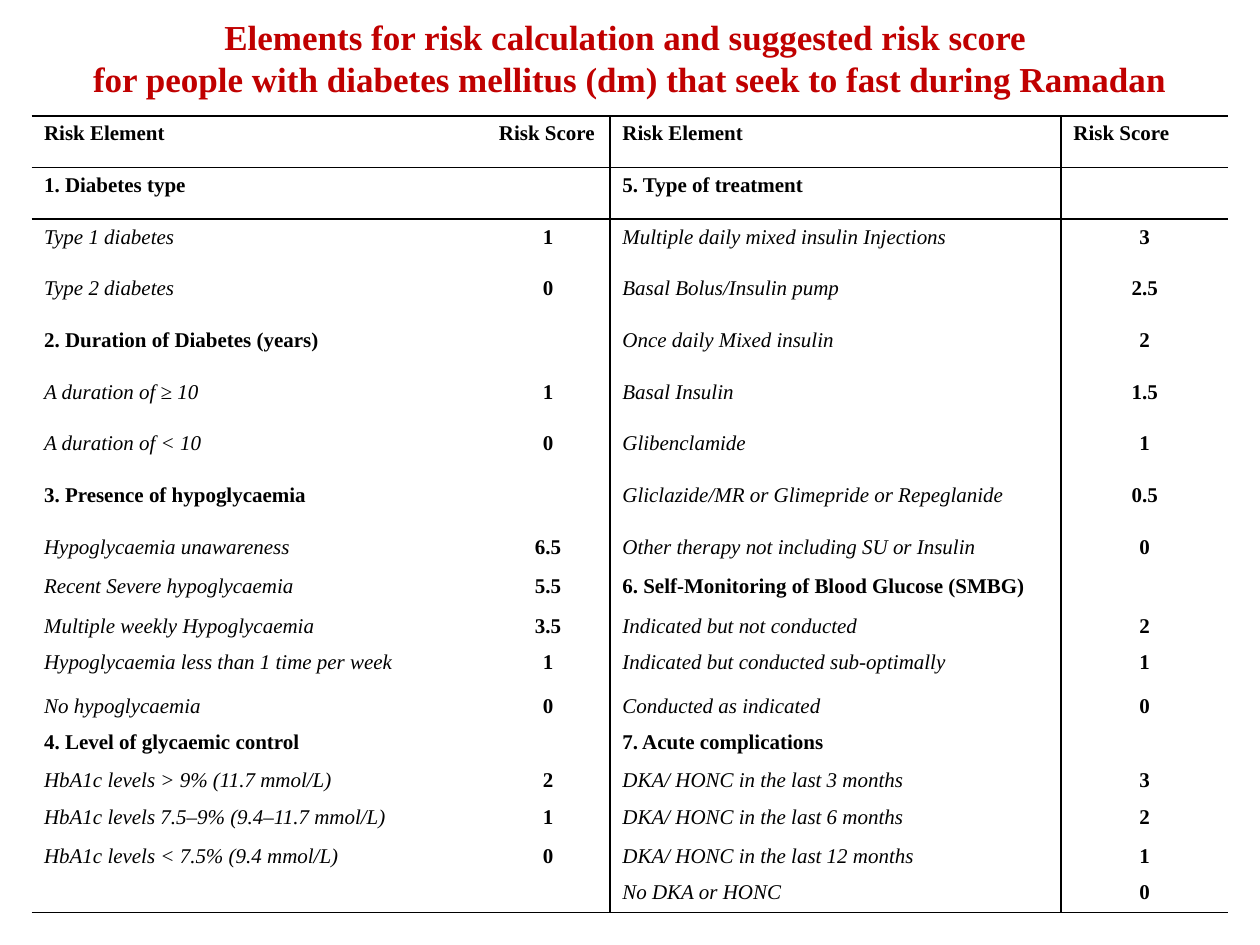
from lxml import etree
from pptx import Presentation
from pptx.dml.color import RGBColor
from pptx.enum.text import MSO_ANCHOR, PP_ALIGN
from pptx.oxml.ns import qn
from pptx.util import Inches, Pt

FONT = "Times New Roman"
BLACK, RED = "000000", "C00000"
PLAIN_TABLE = "{2D5ABB26-0587-4C30-8999-92F81FD0307C}"

TITLE = [
    "Elements for risk calculation and suggested risk score ",
    "for people with diabetes mellitus (dm) that seek to fast during Ramadan",
]
COLUMN_WIDTHS = [3.61, 0.98, 3.58, 1.33]
ROW_HEIGHTS = [0.41] * 8 + [0.31, 0.32, 0.28, 0.35, 0.28, 0.28, 0.29, 0.31, 0.28, 0.28]
HEADER = ("Risk Element", "Risk Score")

# Each half of the table: (element, score); headings have no score
LEFT_RISKS = [
    HEADER,
    ("1. Diabetes type", ""),
    ("Type 1 diabetes", "1"),
    ("Type 2 diabetes", "0"),
    ("2. Duration of Diabetes (years)", ""),
    ("A duration of ≥ 10", "1"),
    ("A duration of < 10", "0"),
    ("3. Presence of hypoglycaemia", ""),
    ("Hypoglycaemia unawareness", "6.5"),
    ("Recent Severe hypoglycaemia", "5.5"),
    ("Multiple weekly Hypoglycaemia", "3.5"),
    ("Hypoglycaemia less than 1 time per week", "1"),
    ("No hypoglycaemia", "0"),
    ("4. Level of glycaemic control", ""),
    ("HbA1c levels > 9% (11.7 mmol/L)", "2"),
    ("HbA1c levels 7.5–9% (9.4–11.7 mmol/L)", "1"),
    ("HbA1c levels < 7.5% (9.4 mmol/L)", "0"),
    ("", ""),
]
RIGHT_RISKS = [
    HEADER,
    ("5. Type of treatment", ""),
    ("Multiple daily mixed insulin Injections", "3"),
    ("Basal Bolus/Insulin pump", "2.5"),
    ("Once daily Mixed insulin", "2"),
    ("Basal Insulin", "1.5"),
    ("Glibenclamide", "1"),
    ("Gliclazide/MR or Glimepride or Repeglanide", "0.5"),
    ("Other therapy not including SU or Insulin", "0"),
    ("6. Self-Monitoring of Blood Glucose (SMBG)", ""),
    ("Indicated but not conducted", "2"),
    ("Indicated but conducted sub-optimally", "1"),
    ("Conducted as indicated", "0"),
    ("7. Acute complications", ""),
    ("DKA/ HONC in the last 3 months", "3"),
    ("DKA/ HONC in the last 6 months", "2"),
    ("DKA/ HONC in the last 12 months", "1"),
    ("No DKA or HONC", "0"),
]


def rgb(color):
    return RGBColor.from_string(color)


def write(paragraph, text, size=12, color=BLACK, bold=True, italic=False,
          align=PP_ALIGN.LEFT):
    paragraph.alignment = align
    if not text:
        # An empty cell keeps the text size, so that its row does not grow
        etree.SubElement(paragraph._p, qn("a:endParaRPr"), sz=str(size * 100))
        return
    run = paragraph.add_run()
    run.text = text
    font = run.font
    font.name, font.size, font.color.rgb = FONT, Pt(size), rgb(color)
    font.bold, font.italic = bold, italic


def set_borders(cell, sides):
    """Draw the given sides, a subset of "LRTB", and clear the others."""
    properties = cell._tc.get_or_add_tcPr()
    for side in "LRTB":
        line = etree.SubElement(properties, qn(f"a:ln{side}"), w=str(Pt(1)))
        if side in sides:
            fill = etree.SubElement(line, qn("a:solidFill"))
            etree.SubElement(fill, qn("a:srgbClr"), val=BLACK)
        else:
            etree.SubElement(line, qn("a:noFill"))


def add_title(slide, left, top, width, height):
    frame = slide.shapes.add_textbox(left, top, width, height).text_frame
    frame.word_wrap = True
    frame.vertical_anchor = MSO_ANCHOR.MIDDLE
    for index, line in enumerate(TITLE):
        paragraph = frame.add_paragraph() if index else frame.paragraphs[0]
        write(paragraph, line, size=20, color=RED, align=PP_ALIGN.CENTER)


def cell_sides(row, column, last_row):
    sides = "R" if column in (1, 2) else ""
    sides += "L" if column in (2, 3) else ""
    sides += "T" if row <= 2 else ""
    sides += "B" if row <= 1 or row == last_row else ""
    return sides


def add_risk_table(slide, left, top, width, height):
    last_row = len(ROW_HEIGHTS) - 1
    frame = slide.shapes.add_table(len(ROW_HEIGHTS), len(COLUMN_WIDTHS),
                                   left, top, width, height)
    table = frame.table
    table.first_row = table.horz_banding = False
    table._tbl.tblPr.find(qn("a:tableStyleId")).text = PLAIN_TABLE
    for column, column_width in zip(table.columns, COLUMN_WIDTHS):
        column.width = Inches(column_width)
    for row, row_height in zip(table.rows, ROW_HEIGHTS):
        row.height = Inches(row_height)

    for row, (left_risk, right_risk) in enumerate(zip(LEFT_RISKS, RIGHT_RISKS)):
        for column, text in enumerate(left_risk + right_risk):
            cell = table.cell(row, column)
            set_borders(cell, cell_sides(row, column, last_row))
            cell.fill.background()
            is_score = column % 2 == 1
            score = (left_risk + right_risk)[column // 2 * 2 + 1]
            is_item = not is_score and row > 0 and score != ""
            centred = is_score and row > 0
            write(cell.text_frame.paragraphs[0], text, bold=not is_item,
                  italic=is_item,
                  align=PP_ALIGN.CENTER if centred else PP_ALIGN.LEFT)


def main():
    deck = Presentation()
    deck.slide_width, deck.slide_height = Inches(10), Inches(7.5)
    slide = deck.slides.add_slide(deck.slide_layouts[6])
    add_risk_table(slide, Inches(0.25), Inches(0.92), Inches(9.5), Inches(6.25))
    add_title(slide, Inches(0.25), Inches(0.08), Inches(9.5), Inches(0.75))
    deck.save("out.pptx")


if __name__ == "__main__":
    main()
